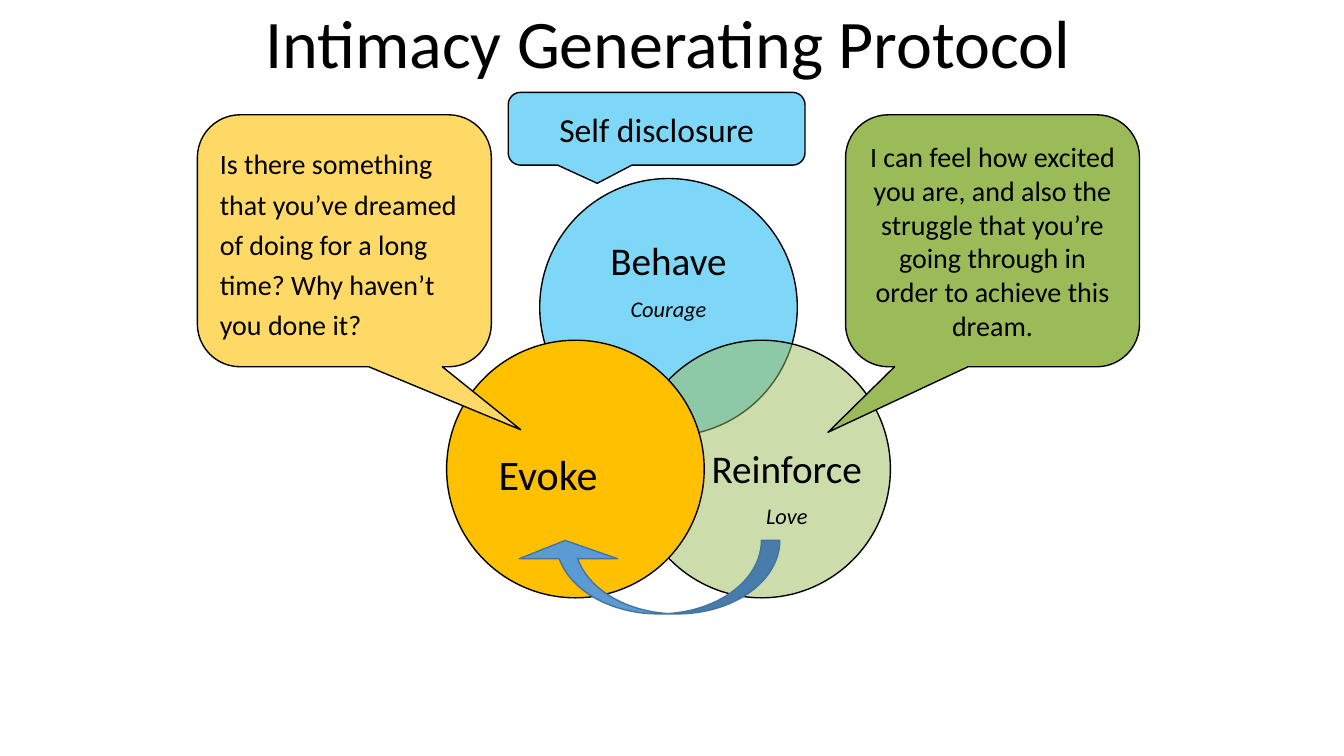
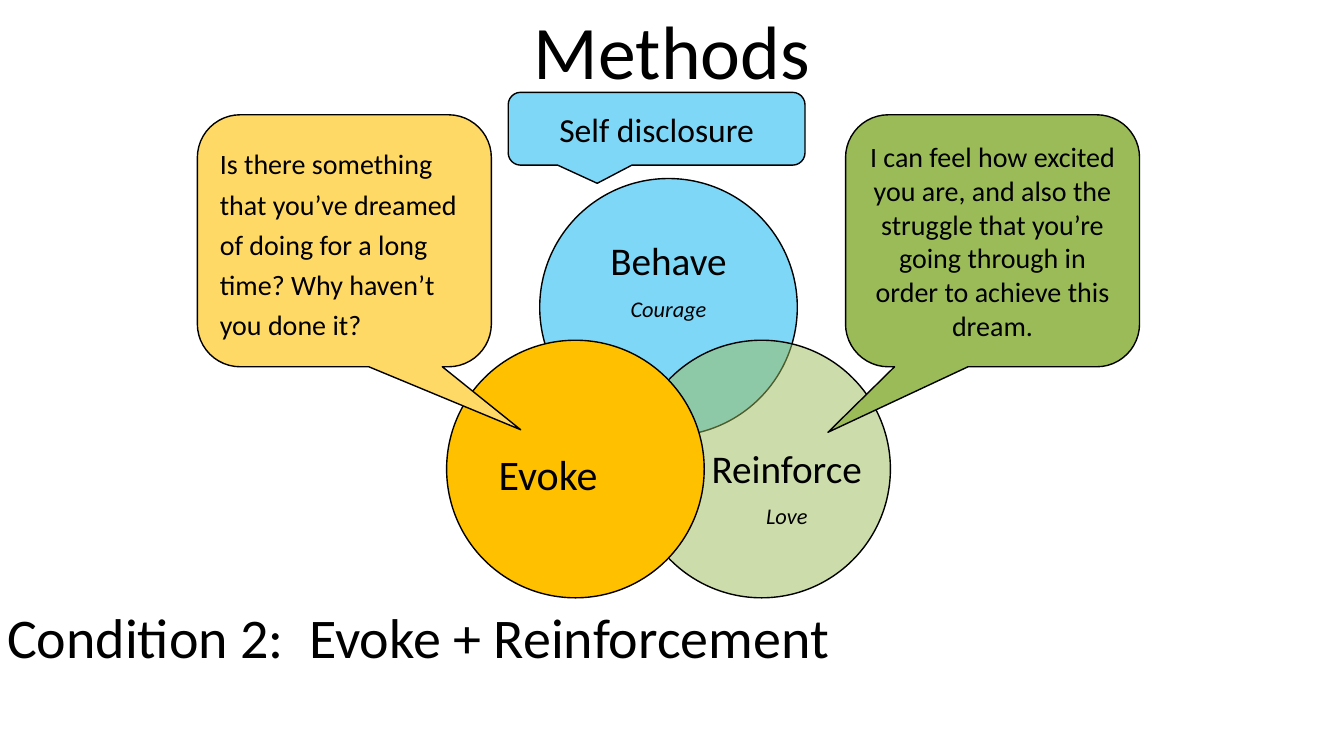
"""Builds two slides on evoking, behaving and reinforcing closeness."""
from pptx import Presentation
from pptx.dml.color import RGBColor
from pptx.enum.shapes import MSO_SHAPE
from pptx.enum.text import MSO_ANCHOR, PP_ALIGN
from pptx.oxml.ns import qn
from pptx.util import Pt
from lxml import etree

OVAL = MSO_SHAPE.OVAL
BUBBLE = MSO_SHAPE.ROUNDED_RECTANGULAR_CALLOUT
ARROW = MSO_SHAPE.CURVED_DOWN_ARROW
LEFT, CENTER = PP_ALIGN.LEFT, PP_ALIGN.CENTER
MIDDLE, TOP = MSO_ANCHOR.MIDDLE, MSO_ANCHOR.TOP

BLACK = RGBColor(0x00, 0x00, 0x00)
SKY = RGBColor(0x00, 0xB0, 0xF0)
GREEN = RGBColor(0x9B, 0xBB, 0x59)
AMBER = RGBColor(0xFF, 0xC0, 0x00)
SAND = RGBColor(0xFF, 0xD9, 0x66)
BLUE = RGBColor(0x5B, 0x9B, 0xD5)
NAVY = RGBColor(0x43, 0x73, 0x9E)

FONT = "Calibri"
WIDE, HIGH = 960, 540
DIAGRAM = (141, 66, 673, 361)
ASK = ("Is there something that you’ve dreamed of doing for a long time? "
       "Why haven’t you done it?")
REPLY = ("I can feel how excited you are, and also the struggle that you’re "
         "going through in order to achieve this dream.")


def write(shape, lines, align=CENTER, anchor=MIDDLE, pitch=1.0, after=0, wrap=True):
    """Fill a shape with (text, size, italic) lines."""
    frame = shape.text_frame
    frame.word_wrap = wrap
    frame.vertical_anchor = anchor
    frame.text = "\n".join(line[0] for line in lines)
    for para, (_, size, slant) in zip(frame.paragraphs, lines):
        para.alignment = align
        para.line_spacing = pitch
        para.space_after = Pt(round(after * size, 1))
        font = para.runs[0].font
        font.name, font.size, font.italic = FONT, Pt(size), slant
        font.color.rgb = BLACK


def label(slide, box, text, size, **style):
    """Add a text box with one line."""
    shape = slide.shapes.add_textbox(*map(Pt, box))
    write(shape, [(text, size, False)], **style)


def draw(slide, kind, box, fill, line=BLACK, sheer=False):
    """Add a filled, outlined shape, half see-through if sheer."""
    shape = slide.shapes.add_shape(kind, *map(Pt, box))
    shape.shadow.inherit = False
    shape.fill.solid()
    shape.fill.fore_color.rgb = fill
    if sheer:
        tint = shape._element.spPr.find(".//" + qn("a:srgbClr"))
        etree.SubElement(tint, qn("a:alpha"), val="50000")
    shape.line.color.rgb = line
    shape.line.width = Pt(1)
    return shape


def adjust(shape, *values):
    """Set the shape's adjustments."""
    for spot, value in enumerate(values):
        shape.adjustments[spot] = value


def circles(slide, box):
    """Place three overlapping circles, one above two."""
    left, top, width, _ = box
    dia, shift, drop = 184, 66.5, 115.5
    mid = left + (width - dia) / 2
    parts = (
        (0, 0, SKY, True, (0, 0, 0, 36), [("Behave", 28, False), ("Courage", 16, True)]),
        (shift, drop, GREEN, True, (36, 29, 0, 0), [("Reinforce", 28, False), ("Love", 16, True)]),
        (-shift, drop, AMBER, False, (0, 12, 39, 0), [("Evoke", 30, False)]),
    )
    for dx, dy, fill, sheer, inset, lines in parts:
        shape = draw(slide, OVAL, (mid + dx, top + dy, dia, dia), fill, sheer=sheer)
        write(shape, lines, pitch=0.9, after=0.35, wrap=False)
        frame = shape.text_frame
        frame.margin_left, frame.margin_top, frame.margin_right, frame.margin_bottom = map(Pt, inset)


def bubbles(slide, box):
    """Place the three speech bubbles."""
    left, top, width, _ = box
    wide, high = 210, 180
    parts = (
        ((left, top + 16, wide, high), SAND, False, (0.6, 0.75), ASK, 20, LEFT, 1.2),
        ((left + width - wide, top + 16, wide, high), GREEN, False, (-0.56, 0.76), REPLY, 20, CENTER, 1.0),
        ((left + 222, top, 212, 52), SKY, True, (-0.2, 0.75), "Self disclosure", 24, CENTER, 1.0),
    )
    for place, fill, sheer, tip, text, size, align, pitch in parts:
        shape = draw(slide, BUBBLE, place, fill, sheer=sheer)
        adjust(shape, *tip, 0.17)
        write(shape, [(text, size, False)], align=align, pitch=pitch)


def diagram(slide, box):
    """Place circles and bubbles in a box."""
    left, top, width, high = box
    circles(slide, (left, top + 61.5, width, high - 61.5))
    bubbles(slide, box)


def loop(slide, box):
    """Add the curved arrow that leads back to the left."""
    shape = draw(slide, ARROW, box, BLUE, NAVY)
    adjust(shape, 0.25, 1.34, 0.25)
    shape.rotation = 180


def page(deck, title, size, box):
    """Add a slide with its title and the shared diagram."""
    slide = deck.slides.add_slide(deck.slide_layouts[6])
    label(slide, box, title, size, pitch=0.9)
    diagram(slide, DIAGRAM)
    return slide


def main():
    """Build and save the deck."""
    deck = Presentation()
    deck.slide_width, deck.slide_height = Pt(WIDE), Pt(HIGH)
    first = page(deck, "Intimacy Generating Protocol", 48.6, (63, 4, 828, 58))
    loop(first, (368.5, 386, 188.5, 52.5))
    second = page(deck, "Methods", 54, (374, -13, 212, 104))
    label(second, (-2, 427, 640, 55), "Condition 2:  Evoke + Reinforcement", 40,
          align=LEFT, anchor=TOP)
    deck.save("out.pptx")


if __name__ == "__main__":
    main()
